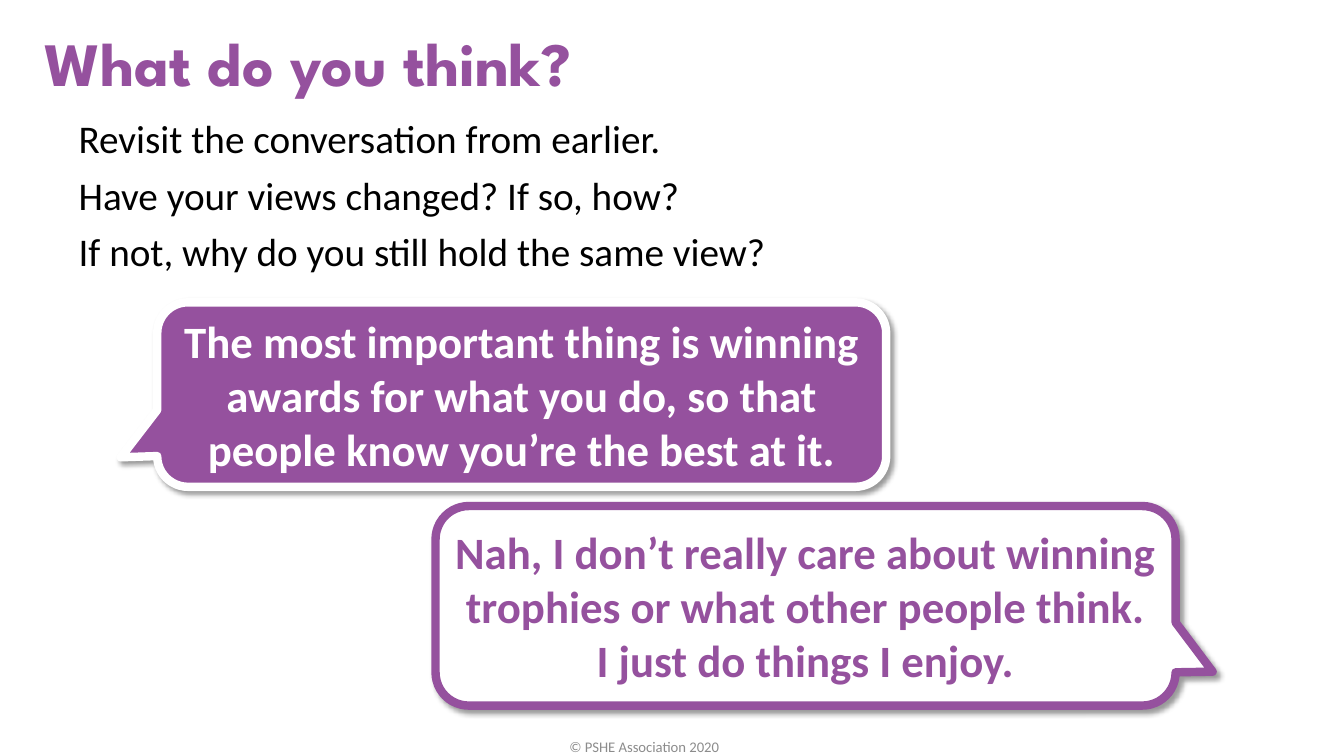
from dataclasses import dataclass

from lxml import etree
from pptx import Presentation
from pptx.dml.color import RGBColor
from pptx.enum.shapes import MSO_SHAPE
from pptx.enum.text import MSO_ANCHOR, MSO_AUTO_SIZE, PP_ALIGN
from pptx.oxml.ns import qn
from pptx.util import Inches, Pt

CALLOUT = MSO_SHAPE.ROUNDED_RECTANGULAR_CALLOUT
TOP, MIDDLE = MSO_ANCHOR.TOP, MSO_ANCHOR.MIDDLE
LEFT, CENTER = PP_ALIGN.LEFT, PP_ALIGN.CENTER
NO_AUTOFIT = MSO_AUTO_SIZE.NONE


@dataclass(frozen=True)
class Theme:
    purple: RGBColor = RGBColor(0x95, 0x51, 0x9E)
    white: RGBColor = RGBColor(0xFF, 0xFF, 0xFF)
    black: RGBColor = RGBColor(0, 0, 0)
    grey: RGBColor = RGBColor(0x8C, 0x8C, 0x8C)
    heading_font: str = "League Spartan"
    text_font: str = "Calibri"
    heading_size: Pt = Pt(44)
    prompt_size: Pt = Pt(28)
    speech_size: Pt = Pt(32)
    credit_size: Pt = Pt(10.5)
    outline: Pt = Pt(6)


THEME = Theme()


def place(shape, box):
    shape.left, shape.top, shape.width, shape.height = (Inches(n) for n in box)


def prepare_frame(shape, anchor):
    frame = shape.text_frame
    frame.word_wrap = True
    frame.auto_size = NO_AUTOFIT
    frame.vertical_anchor = anchor
    return frame


def write(paragraph, text, size, color, align, bold=False, font=THEME.text_font):
    paragraph.alignment = align
    run = paragraph.add_run()
    run.text = text
    run.font.name = font
    run.font.size = size
    run.font.bold = bold
    run.font.color.rgb = color


def add_heading(slide, box, text):
    heading = slide.shapes.title
    place(heading, box)
    frame = prepare_frame(heading, TOP)
    write(frame.paragraphs[0], text, THEME.heading_size, THEME.purple, LEFT,
          bold=True, font=THEME.heading_font)


def add_prompts(slide, box, prompts):
    body = slide.placeholders[1]
    place(body, box)
    frame = prepare_frame(body, TOP)
    for index, prompt in enumerate(prompts):
        paragraph = frame.add_paragraph() if index else frame.paragraphs[0]
        properties = paragraph._p.get_or_add_pPr()
        properties.set("marL", "0")
        properties.set("indent", "0")
        etree.SubElement(properties, qn("a:buNone"))
        paragraph.line_spacing = 0.9
        paragraph.space_before = Pt(10 if index else 0)
        write(paragraph, prompt, THEME.prompt_size, THEME.black, LEFT)


def add_soft_shadow(shape):
    shape.shadow.inherit = False
    effects = shape._element.spPr.find(qn("a:effectLst"))
    shadow = etree.SubElement(
        effects, qn("a:outerShdw"), blurRad=str(Pt(4)), dist=str(Pt(3)),
        dir=str(45 * 60000), algn="tl", rotWithShape="0")
    color = etree.SubElement(shadow, qn("a:srgbClr"), val="000000")
    etree.SubElement(color, qn("a:alpha"), val="40000")


def add_speech(slide, box, tail, text, fill, contrast):
    """Add a speech bubble whose outline and text share the contrast colour."""
    bubble = slide.shapes.add_shape(CALLOUT, *(Inches(n) for n in box))
    bubble.adjustments[0], bubble.adjustments[1] = tail
    bubble.fill.solid()
    bubble.fill.fore_color.rgb = fill
    bubble.line.color.rgb = contrast
    bubble.line.width = THEME.outline
    add_soft_shadow(bubble)
    frame = prepare_frame(bubble, MIDDLE)
    write(frame.paragraphs[0], text, THEME.speech_size, contrast, CENTER, bold=True)


def add_credit(slide, box, text):
    credit = slide.shapes.add_textbox(*(Inches(n) for n in box))
    frame = prepare_frame(credit, MIDDLE)
    frame.margin_top = frame.margin_bottom = 0
    write(frame.paragraphs[0], text, THEME.credit_size, THEME.grey, CENTER)


def build_discussion_slide(deck):
    slide = deck.slides.add_slide(deck.slide_layouts[1])
    add_heading(slide, (0.34, 0.2, 11.72, 0.84), "What do you think?")
    add_credit(slide, (4.39, 7.31, 4, 0.19), "© PSHE Association 2020")
    add_prompts(slide, (0.68, 1.14, 11.74, 6.16), (
        "Revisit the conversation from earlier.",
        "Have your views changed? If so, how?",
        "If not, why do you still hold the same view?",
    ))
    add_speech(slide, (1.56, 3, 7.23, 1.83), (-0.55, 0.34),
               "The most important thing is winning awards for what you do, "
               "so that people know you’re the best at it.",
               THEME.purple, THEME.white)
    add_speech(slide, (4.32, 5.02, 7.34, 1.98), (0.55, 0.33),
               "Nah, I don’t really care about winning trophies or what other "
               "people think. I just do things I enjoy.",
               THEME.white, THEME.purple)


def main():
    deck = Presentation()
    deck.slide_width, deck.slide_height = Inches(13.33), Inches(7.5)
    build_discussion_slide(deck)
    deck.save("out.pptx")


if __name__ == "__main__":
    main()
